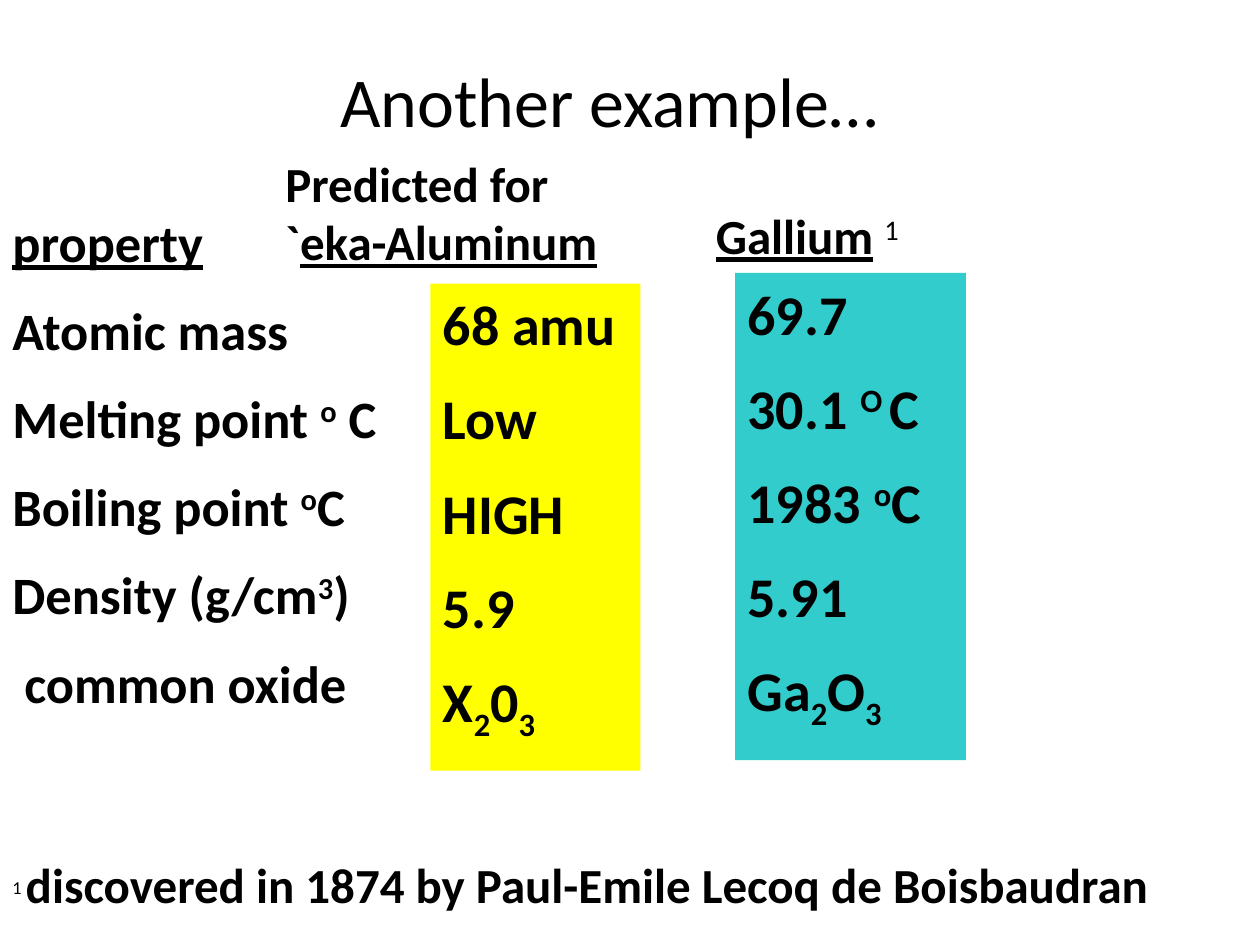
from pptx import Presentation
from pptx.dml.color import RGBColor
from pptx.enum.shapes import MSO_SHAPE
from pptx.enum.text import MSO_ANCHOR, PP_ALIGN
from pptx.util import Inches, Pt

RECT = MSO_SHAPE.RECTANGLE
TOP, MIDDLE = MSO_ANCHOR.TOP, MSO_ANCHOR.MIDDLE
LEFT, CENTER = PP_ALIGN.LEFT, PP_ALIGN.CENTER

COLORS = {"text": "000000", "predicted": "FFFF00", "measured": "33CCCC"}
COLS, ROWS = 120, 90
GAP = 0.48


def run(text, **fmt):
    return text, fmt


def sup(text, **fmt):
    return run(text, baseline=30, **fmt)


def sub(text):
    return run(text, baseline=-25)


class SlideBuilder:
    font = "Calibri"

    def __init__(self, prs):
        self.slide = prs.slides.add_slide(prs.slide_layouts[6])
        self.col = prs.slide_width / COLS
        self.row = prs.slide_height / ROWS

    def place(self, left, top, width, height):
        return (round(left * self.col), round(top * self.row),
                round(width * self.col), round(height * self.row))

    def add_run(self, p, text, size, bold=True, underline=False, baseline=0):
        r = p.add_run()
        r.text = text
        r.font.name = self.font
        r.font.size = Pt(size)
        r.font.bold = bold
        r.font.underline = underline
        r.font.color.rgb = RGBColor.from_string(COLORS["text"])
        if baseline:
            r._r.get_or_add_rPr().set("baseline", str(baseline * 1000))

    def fill_text(self, sp, lines, size, gap=0, align=LEFT, anchor=TOP, inset=0.05):
        tf = sp.text_frame
        tf.word_wrap = True
        tf.vertical_anchor = anchor
        tf.margin_top = Inches(inset)
        for i, line in enumerate(lines):
            p = tf.add_paragraph() if i else tf.paragraphs[0]
            p.alignment = align
            p.space_before = Pt(round(gap * size, 1) if i else 0)
            for text, fmt in line:
                self.add_run(p, text, **{"size": size, **fmt})

    def text(self, box, lines, size, **fmt):
        sp = self.slide.shapes.add_textbox(*self.place(*box))
        self.fill_text(sp, lines, size, **fmt)

    def panel(self, box, color, lines, size, **fmt):
        sp = self.slide.shapes.add_shape(RECT, *self.place(*box))
        sp.shadow.inherit = False
        sp.fill.solid()
        sp.fill.fore_color.rgb = RGBColor.from_string(COLORS[color])
        sp.line.fill.background()
        self.fill_text(sp, lines, size, **fmt)


def main():
    prs = Presentation()
    prs.slide_width, prs.slide_height = Inches(10), Inches(7.5)
    s = SlideBuilder(prs)

    s.text((7, 2, 102, 15), [[run("Another example…", bold=False)]], 40,
           align=CENTER, anchor=MIDDLE)
    s.text((0, 13, 39, 68.5), [
        [run("property", underline=True)],
        [run("Atomic mass")],
        [run("Melting point "), sup("o"), run(" C")],
        [run("Boiling point "), sup("o"), run("C")],
        [run("Density (g/cm"), sup("3"), run(")")],
        [run(" common oxide")],
    ], 30, gap=GAP, inset=0.58)
    s.panel((41, 27, 20, 46.4), "predicted", [
        [run("68 amu")],
        [run("Low")],
        [run("HIGH")],
        [run("5.9")],
        [run("X"), sub("2"), run("0"), sub("3")],
    ], 32, gap=GAP)
    s.text((67, 19, 29, 6.8), [
        [run("Gallium", underline=True), run(" ", bold=False), sup("1", bold=False)],
    ], 28)
    s.text((26, 14, 43, 12.5), [
        [run("Predicted for")],
        [run("`"), run("eka-Aluminum", underline=True)],
    ], 28)
    s.panel((70, 26, 22, 46.4), "measured", [
        [run("69.7")],
        [run("30.1 "), sup("O "), run("C")],
        [run("1983 "), sup("o"), run("C")],
        [run("5.91")],
        [run("Ga"), sub("2"), run("O"), sub("3")],
    ], 32, gap=GAP)
    s.text((0, 80.8, 120, 6.8), [
        [sup("1 ", size=18, bold=False),
         run("discovered in 1874 by Paul-Emile Lecoq de Boisbaudran")],
    ], 28)

    prs.save("out.pptx")


if __name__ == "__main__":
    main()
